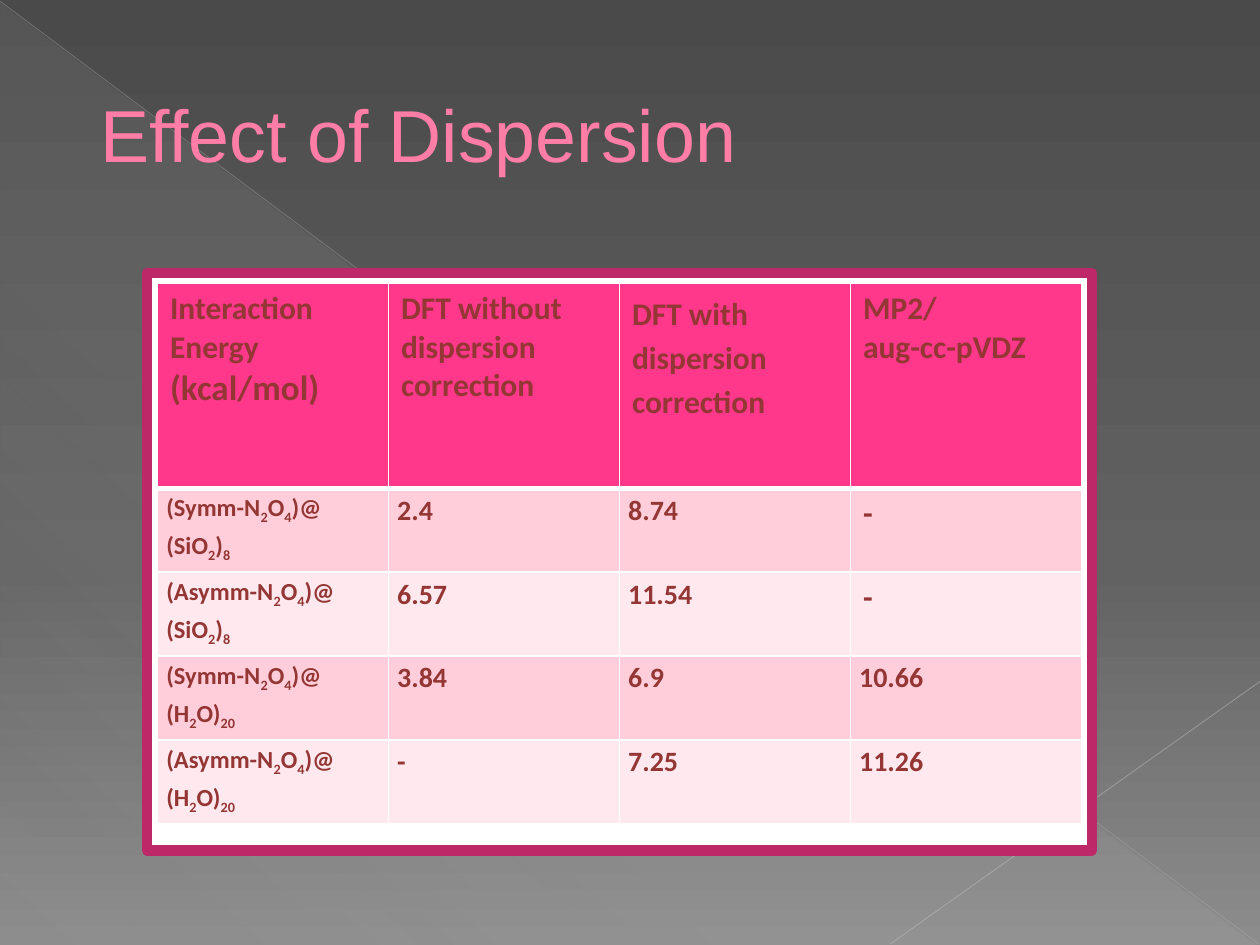
from dataclasses import dataclass

from pptx import Presentation, util as u
from pptx.dml.color import RGBColor
from pptx.enum import shapes, text
from pptx.oxml import parse_xml
from pptx.oxml.ns import nsdecls, qn

UNIT = u.Inches(1) / 12


@dataclass(frozen=True)
class Theme:
    """Colours, fonts and type sizes of the slide."""
    title: str = "FF7DA7"
    title_edge: str = "B12761"
    ink: str = "943634"
    frame: str = "BD2968"
    white: str = "FFFFFF"
    header: str = "FF388C"
    bands: tuple = ("FFCEDA", "FFE8EE")
    backdrop: tuple = ((0, "4A4A4A", 100), (60, "626262", 100), (100, "8C8C8C", 100))
    glow: tuple = ((0, "D2D2D2", 10), (70, "D2D2D2", 8), (100, "D2D2D2", 1))
    title_font: str = "Arial"
    body_font: str = "Calibri"
    title_size: int = 42
    head_size: int = 18
    unit_size: int = 20
    label_size: int = 14
    value_size: int = 16


T = Theme()

HEADERS = (
    ([("Interaction Energy ", T.head_size), ("(kcal/mol)", T.unit_size)],),
    ([("DFT without dispersion correction", T.head_size)],),
    ([("DFT with dispersion correction", T.head_size)],),
    ([("MP2/", T.head_size)], [("aug-cc-pVDZ", T.head_size)]),
)
SPACED_HEADER = 2
ROWS = (
    ("(Symm-N|2|O|4|)@ (SiO|2|)|8", "2.4", "8.74", "-"),
    ("(Asymm-N|2|O|4|)@ (SiO|2|)|8", "6.57", "11.54", "-"),
    ("(Symm-N|2|O|4|)@ (H|2|O)|20", "3.84", "6.9", "10.66"),
    ("(Asymm-N|2|O|4|)@ (H|2|O)|20", "-", "7.25", "11.26"),
)


def grid(*cells):
    """Turn grid columns and rows (twelve to the inch) into lengths."""
    return [u.Emu(round(c * UNIT)) for c in cells]


def rgb(value):
    """Return a colour from its hex value."""
    return RGBColor.from_string(value)


def apply(target, values):
    """Set attributes of an object from a dict."""
    for name, value in values.items():
        setattr(target, name, value)


def set_gradient(fill, owner, stops, angle):
    """Fill an object with a linear gradient of any number of stops."""
    fill.gradient()
    old = next(owner.iter(qn("a:gradFill")))
    marks = "".join(
        f'<a:gs pos="{pos * 1000}"><a:srgbClr val="{color}">'
        f'<a:alpha val="{alpha * 1000}"/></a:srgbClr></a:gs>'
        for pos, color, alpha in stops)
    new = parse_xml(f'<a:gradFill {nsdecls("a")} rotWithShape="1"><a:gsLst>{marks}</a:gsLst>'
                    f'<a:lin ang="{angle * 60000}" scaled="0"/></a:gradFill>')
    old.getparent().replace(old, new)


def line_xml(tag, color, width):
    """Build a solid line element of the given tag."""
    return parse_xml(f'<a:{tag} {nsdecls("a")} w="{u.Pt(width)}"><a:solidFill>'
                     f'<a:srgbClr val="{color}"/></a:solidFill></a:{tag}>')


def add_run(p, words, size, font, color, bold=False):
    """Add a formatted run to a paragraph."""
    r = p.add_run()
    r.text = words
    apply(r.font, {"size": u.Pt(size), "name": font, "bold": bold})
    r.font.color.rgb = rgb(color)
    return r


def add_ray(s, start, end, color, width, alpha):
    """Draw a faint straight line across the backdrop."""
    line = s.shapes.add_connector(shapes.MSO_CONNECTOR.STRAIGHT, *grid(*start, *end))
    line.line.color.rgb = rgb(color)
    line.line.width = u.Pt(width)
    tint = next(line.element.spPr.iter(qn("a:srgbClr")))
    tint.append(parse_xml(f'<a:alpha {nsdecls("a")} val="{alpha * 1000}"/>'))
    line.element.spPr.append(parse_xml(f'<a:effectLst {nsdecls("a")}/>'))


def add_backdrop(s):
    """Draw the gradient background, the glowing triangle and the rays."""
    set_gradient(s.background.fill, s.element, T.backdrop, 90)
    sp = s.shapes.add_shape(shapes.MSO_SHAPE.RIGHT_TRIANGLE, *grid(0, 0.2, 119.8, 89.8))
    sp.shadow.inherit = False
    sp.line.fill.background()
    set_gradient(sp.fill, sp.element.spPr, T.glow, 133)
    add_ray(s, (0, 0.1), (119.9, 89.9), "BFBFBF", 0.39, 35)
    add_ray(s, (120, 64.9), (84.8, 89.9), "C6C6C6", 0.47, 45)


def add_panel(s):
    """Draw the framed white panel behind the table."""
    sp = s.shapes.add_shape(shapes.MSO_SHAPE.RECTANGLE, *grid(14, 26, 90, 55))
    sp.shadow.inherit = False
    sp.fill.solid()
    sp.fill.fore_color.rgb = rgb(T.white)
    sp.line.color.rgb = rgb(T.frame)
    sp.line.width = u.Pt(6)
    next(sp.element.spPr.iter(qn("a:ln"))).append(parse_xml(f'<a:round {nsdecls("a")}/>'))


def add_title(s, words):
    """Place and format the title above the backdrop."""
    sp = s.shapes.title
    s.shapes.element.append(sp.element)
    apply(sp, dict(zip(("left", "top", "width", "height"), grid(2, 3.5, 108, 18.4))))
    tf = sp.text_frame
    apply(tf, {"word_wrap": True, "auto_size": text.MSO_AUTO_SIZE.NONE,
               "vertical_anchor": text.MSO_ANCHOR.MIDDLE})
    p = tf.paragraphs[0]
    p.alignment = text.PP_ALIGN.LEFT
    apply_indent = {"marL": str(u.Inches(0.53)), "indent": "0"}
    for name, value in apply_indent.items():
        p._p.get_or_add_pPr().set(name, value)
    r = add_run(p, words, T.title_size, T.title_font, T.title)
    r.font._element.insert(0, line_xml("ln", T.title_edge, 0.5))


def fill_cell(cell, paragraphs, fill, spacing=None, tight=False, base=1):
    """Write subscript-aware paragraphs into a cell and style it."""
    if tight:
        apply(cell, {"margin_left": u.Inches(0.07), "margin_right": u.Inches(0.07),
                     "margin_top": 0, "margin_bottom": 0})
    cell.fill.solid()
    cell.fill.fore_color.rgb = rgb(fill)
    for i, (tag, width) in enumerate((("lnL", 1), ("lnR", 1), ("lnT", 1), ("lnB", base))):
        cell._tc.get_or_add_tcPr().insert(i, line_xml(tag, T.white, width))
    tf = cell.text_frame
    for i, runs in enumerate(paragraphs):
        p = tf.add_paragraph() if i else tf.paragraphs[0]
        p.line_spacing = spacing
        for words, size in runs:
            for j, part in enumerate(words.split("|")):
                r = add_run(p, part, size, T.body_font, T.ink, True)
                if j % 2:
                    r._r.get_or_add_rPr().set("baseline", "-25000")


def add_energy_table(s):
    """Build the table of interaction energies."""
    frame = s.shapes.add_table(len(ROWS) + 1, len(HEADERS), *grid(15, 27, 88, 51.5))
    table = frame.table
    apply(table, {"first_row": False, "horz_banding": False})
    for col in table.columns:
        col.width = grid(22)[0]
    for i, row in enumerate(table.rows):
        row.height = grid(8 if i else 19.5)[0]
    for c, paragraphs in enumerate(HEADERS):
        fill_cell(table.cell(0, c), paragraphs, T.header,
                  spacing=1.15 if c == SPACED_HEADER else None, base=3)
    for i, row in enumerate(ROWS):
        for c, words in enumerate(row):
            loose = c == len(row) - 1 and words == "-"
            size = T.head_size if loose else T.value_size if c else T.label_size
            fill_cell(table.cell(i + 1, c), [[(words, size)]], T.bands[i % 2],
                      spacing=None if loose else 1.15, tight=not loose)


def main():
    """Build the slide and save it."""
    prs = Presentation()
    apply(prs, dict(zip(("slide_width", "slide_height"), grid(120, 90))))
    s = prs.slides.add_slide(prs.slide_layouts[5])
    add_backdrop(s)
    add_panel(s)
    add_title(s, "Effect of Dispersion")
    add_energy_table(s)
    prs.save("out.pptx")


if __name__ == "__main__":
    main()
